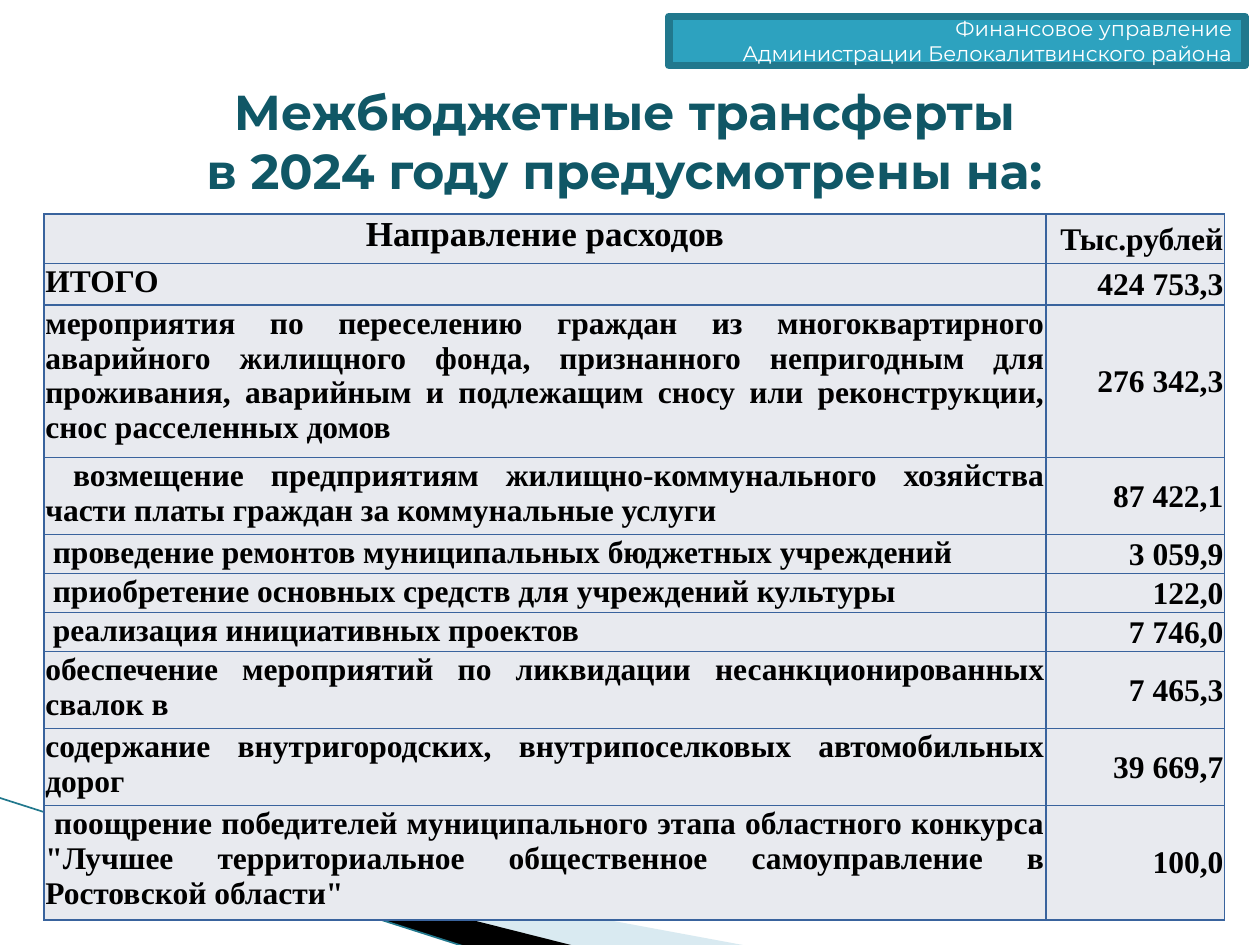
from dataclasses import dataclass

from lxml import etree
from pptx import Presentation
from pptx.dml.color import RGBColor
from pptx.enum.shapes import MSO_CONNECTOR, MSO_SHAPE
from pptx.enum.text import MSO_ANCHOR, PP_ALIGN
from pptx.oxml.ns import qn
from pptx.util import Inches, Pt


@dataclass(frozen=True)
class Theme:
    heading_font: str = "Montserrat"
    table_font: str = "Times New Roman"
    white: str = "FFFFFF"
    black: str = "000000"
    teal: str = "2DA2BF"
    dark_teal: str = "21788D"
    title: str = "105766"
    pale_blue: str = "A0CBDC"
    cell: str = "E8EAEF"
    border: str = "39639D"
    banner_size: int = 12
    title_size: int = 28
    header_size: int = 20
    table_size: int = 18


THEME = Theme()

# Purpose, amount, row height in inches, first-line indent in inches
ROWS = [
    ("Направление расходов", "Тыс.рублей", 0.39, 0),
    ("ИТОГО", "424 753,3", 0.33, 0),
    ("мероприятия по переселению граждан из многоквартирного аварийного "
     "жилищного фонда, признанного непригодным для проживания, аварийным и "
     "подлежащим сносу или реконструкции, снос расселенных домов",
     "276 342,3", 1.21, 0),
    ("возмещение предприятиям жилищно-коммунального хозяйства части платы "
     "граждан за коммунальные услуги", "87 422,1", 0.61, 0.22),
    ("проведение ремонтов муниципальных бюджетных учреждений", "3 059,9", 0.31, 0.06),
    ("приобретение основных средств для учреждений культуры", "122,0", 0.31, 0.06),
    ("реализация инициативных проектов", "7 746,0", 0.31, 0.06),
    ("обеспечение мероприятий по ликвидации несанкционированных свалок в",
     "7 465,3", 0.61, 0),
    ("содержание внутригородских, внутрипоселковых автомобильных дорог",
     "39 669,7", 0.61, 0),
    ("поощрение победителей муниципального этапа областного конкурса "
     "\"Лучшее территориальное общественное самоуправление в Ростовской области\"",
     "100,0", 0.9, 0.07),
]


def color(value):
    return RGBColor.from_string(value)


def style(para, name, size, ink, align, bold=False):
    para.alignment = align
    para.font.name = name
    para.font.size = Pt(size)
    para.font.bold = bold
    para.font.color.rgb = color(ink)


def add_lines(frame, lines, size, ink, align, bold=False):
    for index, line in enumerate(lines):
        para = frame.paragraphs[0] if index == 0 else frame.add_paragraph()
        para.text = line
        style(para, THEME.heading_font, size, ink, align, bold)


def add_wedge(page, points, fill, alpha=None):
    corners = [(Inches(x), Inches(y)) for x, y in points]
    builder = page.shapes.build_freeform(*corners[0])
    builder.add_line_segments(corners[1:], close=True)
    wedge = builder.convert_to_shape()
    wedge.shadow.inherit = False
    wedge.fill.solid()
    wedge.fill.fore_color.rgb = color(fill)
    wedge.line.fill.background()
    if alpha:
        paint = wedge._element.spPr.find(qn("a:solidFill"))[0]
        etree.SubElement(paint, qn("a:alpha")).set("val", str(alpha * 1000))


def add_corner_decoration(page, left, top):
    def place(*offsets):
        return [(left + x, top + y) for x, y in offsets]

    add_wedge(page, place((0.56, 0.18), (5.96, 1.18), (4.57, 1.18), (0.56, 0.17)),
              THEME.pale_blue, alpha=40)
    add_wedge(page, place((0.54, 0.16), (4.58, 1.18), (3.73, 1.19), (0.55, 0.17)),
              THEME.black)
    (x1, y1), (x2, y2) = place((0, 0), (3.72, 1.19))
    edge = page.shapes.add_connector(
        MSO_CONNECTOR.STRAIGHT, Inches(x1), Inches(y1), Inches(x2), Inches(y2))
    edge.line.color.rgb = color(THEME.dark_teal)
    edge.line.width = Pt(0.95)
    etree.SubElement(edge._element.spPr, qn("a:effectLst"))


def add_banner(page, box):
    banner = page.shapes.add_shape(MSO_SHAPE.RECTANGLE, *box)
    banner.shadow.inherit = False
    banner.fill.solid()
    banner.fill.fore_color.rgb = color(THEME.teal)
    banner.line.color.rgb = color(THEME.dark_teal)
    banner.line.width = Pt(4.33)
    frame = banner.text_frame
    frame.word_wrap = True
    frame.vertical_anchor = MSO_ANCHOR.MIDDLE
    add_lines(frame, ["Финансовое управление", "Администрации Белокалитвинского района"],
              THEME.banner_size, THEME.white, PP_ALIGN.RIGHT)


def add_title(page, box):
    frame = page.shapes.add_textbox(*box).text_frame
    frame.word_wrap = True
    add_lines(frame, ["Межбюджетные трансферты", "в 2024 году предусмотрены на:"],
              THEME.title_size, THEME.title, PP_ALIGN.CENTER, bold=True)


def add_borders(cell):
    properties = cell._tc.get_or_add_tcPr()
    for side in ("a:lnL", "a:lnR", "a:lnT", "a:lnB"):
        line = etree.SubElement(properties, qn(side), w=str(Pt(1)))
        paint = etree.SubElement(line, qn("a:solidFill"))
        etree.SubElement(paint, qn("a:srgbClr"), val=THEME.border)


def fill_cell(cell, text, size, align, anchor, indent=0):
    add_borders(cell)
    cell.fill.solid()
    cell.fill.fore_color.rgb = color(THEME.cell)
    cell.margin_left = cell.margin_right = cell.margin_top = Inches(0.01)
    cell.margin_bottom = 0
    cell.vertical_anchor = anchor
    para = cell.text_frame.paragraphs[0]
    para.text = text
    if indent:
        para._p.get_or_add_pPr().set("indent", str(Inches(indent)))
    style(para, THEME.table_font, size, THEME.black, align, bold=True)


def add_transfers_table(page, box):
    table = page.shapes.add_table(len(ROWS), 2, *box).table
    amount_width = Inches(1.42)
    table.columns[0].width = box[2] - amount_width
    table.columns[1].width = amount_width
    for index, (purpose, amount, height, indent) in enumerate(ROWS):
        table.rows[index].height = Inches(height)
        is_header = index == 0
        fill_cell(table.cell(index, 0), purpose,
                  THEME.header_size if is_header else THEME.table_size,
                  PP_ALIGN.CENTER if is_header else PP_ALIGN.JUSTIFY,
                  MSO_ANCHOR.TOP, indent)
        fill_cell(table.cell(index, 1), amount, THEME.table_size,
                  PP_ALIGN.RIGHT, MSO_ANCHOR.MIDDLE)


def main():
    deck = Presentation()
    deck.slide_width, deck.slide_height = Inches(10), Inches(7.5)
    page = deck.slides.add_slide(deck.slide_layouts[6])
    add_corner_decoration(page, -0.01, 6.33)
    add_banner(page, (Inches(5.31), Inches(0.13), Inches(4.57), Inches(0.39)))
    add_title(page, (Inches(0.35), Inches(0.6), Inches(9.21), Inches(1.04)))
    add_transfers_table(page, (Inches(0.35), Inches(1.7), Inches(9.37), Inches(5.59)))
    deck.save("out.pptx")


if __name__ == "__main__":
    main()
